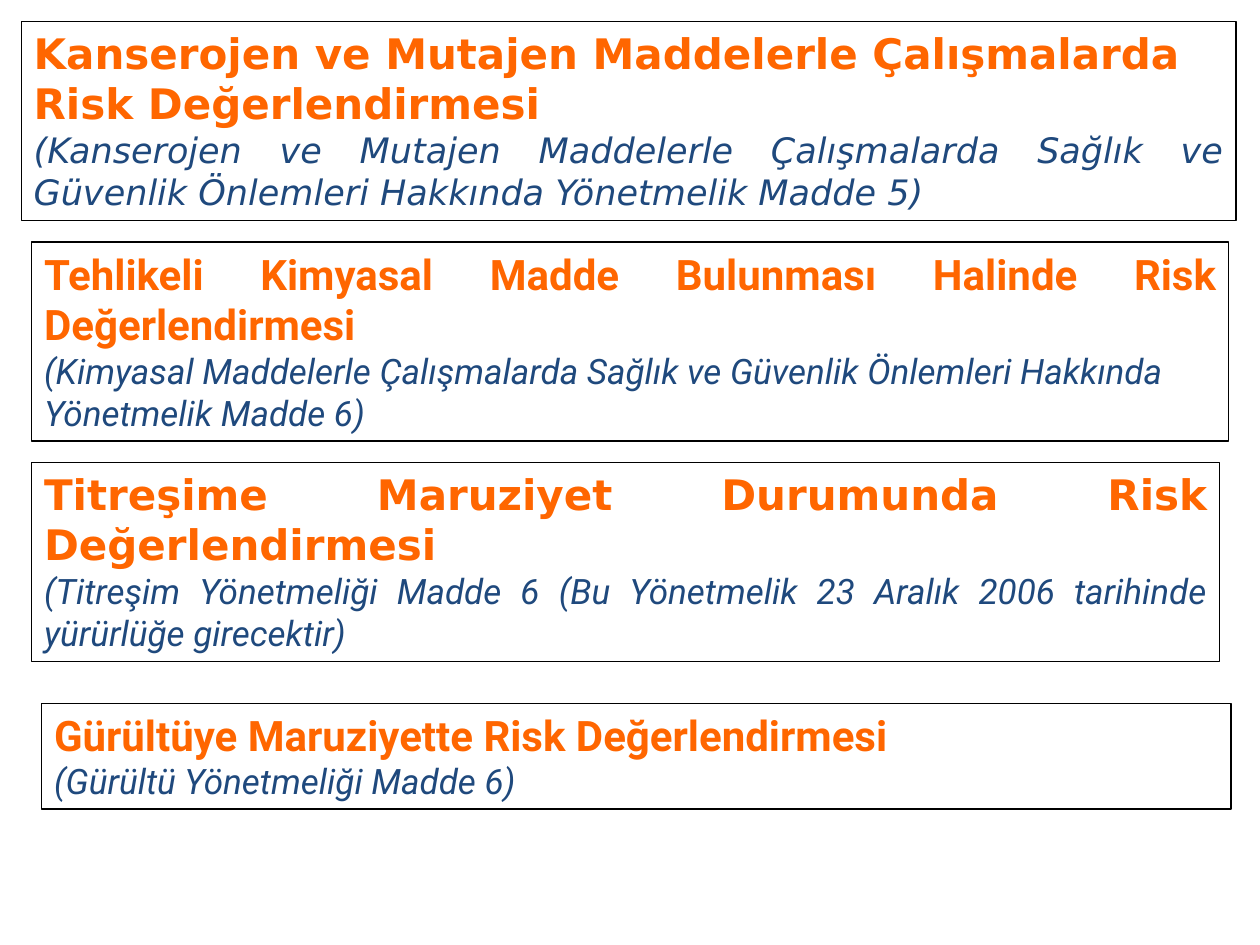
import pptx
import pptx.util
import pptx.dml.color
import pptx.enum.shapes
import pptx.enum.text
from pptx.util import Cm, Pt

ORANGE = pptx.dml.color.RGBColor(0xFF, 0x66, 0x00)
NAVY = pptx.dml.color.RGBColor(0x1F, 0x49, 0x7D)
BLACK = pptx.dml.color.RGBColor(0, 0, 0)
JUSTIFY = pptx.enum.text.PP_ALIGN.JUSTIFY
LEFT = pptx.enum.text.PP_ALIGN.LEFT
WIDE_FONT = "DejaVu Sans"
NARROW_FONT = "Roboto"

REGULATIONS = [
    {
        "box": (0.43, 0.43, 24.49, 4.01),
        "headings": ["Kanserojen ve Mutajen Maddelerle Çalışmalarda", "Risk Değerlendirmesi"],
        "heading_font": WIDE_FONT,
        "citation": "(Kanserojen ve Mutajen Maddelerle Çalışmalarda Sağlık ve Güvenlik Önlemleri Hakkında Yönetmelik Madde 5)",
        "citation_font": WIDE_FONT,
        "citation_alignment": JUSTIFY,
    },
    {
        "box": (0.64, 4.88, 24.13, 4.01),
        "headings": ["Tehlikeli Kimyasal Madde Bulunması Halinde Risk Değerlendirmesi"],
        "heading_font": NARROW_FONT,
        "citation": "(Kimyasal Maddelerle Çalışmalarda Sağlık ve Güvenlik Önlemleri Hakkında Yönetmelik Madde 6)",
        "citation_font": NARROW_FONT,
        "citation_alignment": LEFT,
    },
    {
        "box": (0.64, 9.32, 23.95, 4.01),
        "headings": ["Titreşime Maruziyet Durumunda Risk Değerlendirmesi"],
        "heading_font": WIDE_FONT,
        "citation": "(Titreşim Yönetmeliği Madde 6 (Bu Yönetmelik 23 Aralık 2006 tarihinde yürürlüğe girecektir)",
        "citation_font": NARROW_FONT,
        "citation_alignment": JUSTIFY,
    },
    {
        "box": (0.84, 14.18, 23.98, 2.13),
        "headings": ["Gürültüye Maruziyette Risk Değerlendirmesi"],
        "heading_font": NARROW_FONT,
        "citation": "(Gürültü Yönetmeliği Madde 6)",
        "citation_font": NARROW_FONT,
        "citation_alignment": JUSTIFY,
    },
]


def write_paragraph(paragraph, text, font_name, size, color, alignment, is_heading):
    paragraph.text = text
    paragraph.alignment = alignment
    font = paragraph.font
    font.name = font_name
    font.size = Pt(size)
    font.color.rgb = color
    font.bold = is_heading
    font.italic = not is_heading


def add_regulation(slide, regulation):
    shape = slide.shapes.add_shape(
        pptx.enum.shapes.MSO_SHAPE.RECTANGLE, *(Cm(length) for length in regulation["box"])
    )
    shape.shadow.inherit = False
    shape.fill.background()
    shape.line.color.rgb = BLACK
    shape.line.width = Pt(0.75)

    text_frame = shape.text_frame
    text_frame.word_wrap = True
    text_frame.auto_size = pptx.enum.text.MSO_AUTO_SIZE.SHAPE_TO_FIT_TEXT
    text_frame.vertical_anchor = pptx.enum.text.MSO_ANCHOR.TOP

    paragraph = text_frame.paragraphs[0]
    for heading in regulation["headings"]:
        write_paragraph(paragraph, heading, regulation["heading_font"], 24, ORANGE, JUSTIFY, True)
        paragraph = text_frame.add_paragraph()
    write_paragraph(
        paragraph, regulation["citation"], regulation["citation_font"], 20, NAVY,
        regulation["citation_alignment"], False,
    )


def main():
    presentation = pptx.Presentation()
    presentation.slide_width = Cm(25.4)
    presentation.slide_height = Cm(19.05)
    slide = presentation.slides.add_slide(presentation.slide_layouts[6])
    for regulation in REGULATIONS:
        add_regulation(slide, regulation)
    presentation.save("out.pptx")


if __name__ == "__main__":
    main()
